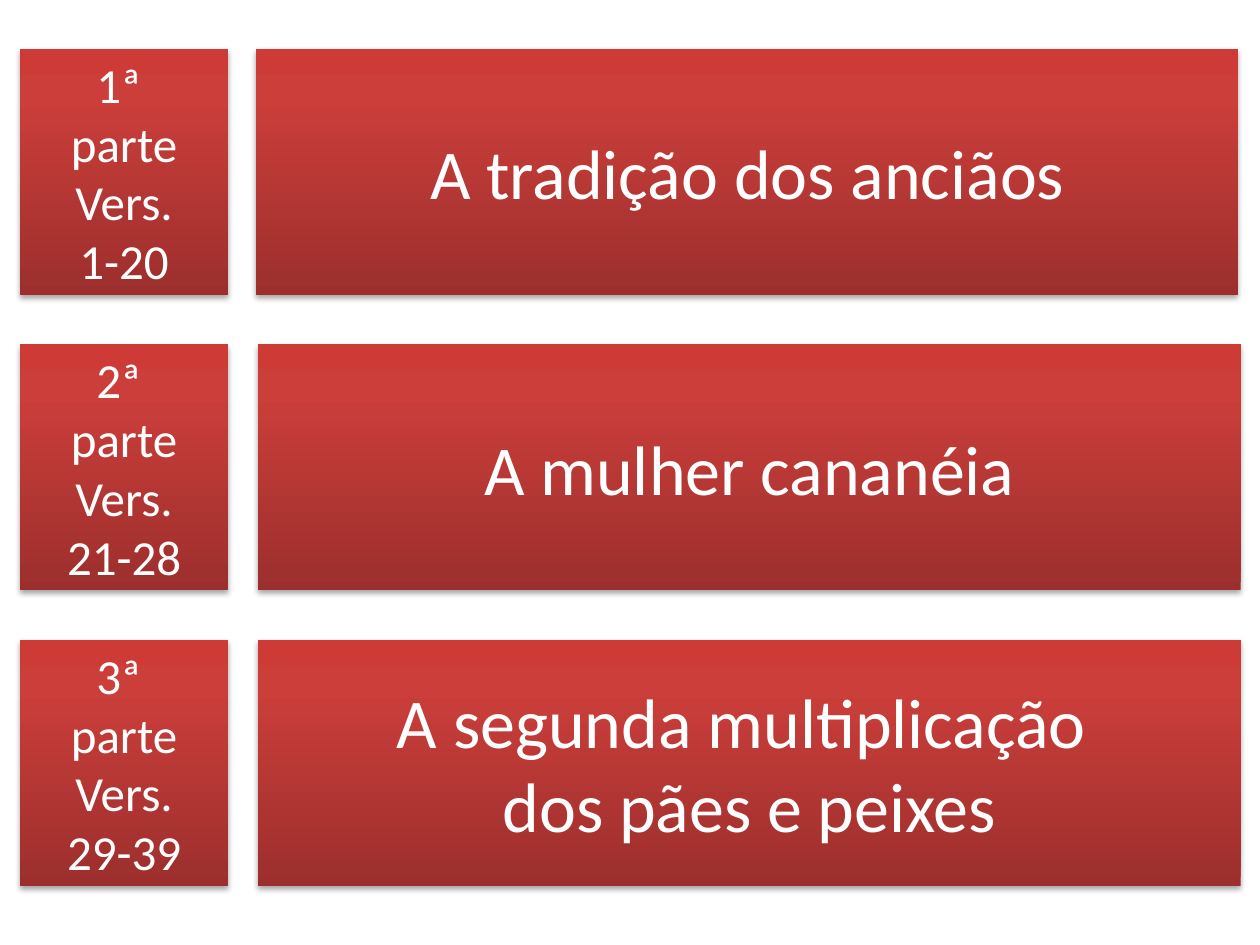
from copy import deepcopy
from dataclasses import dataclass

from lxml.etree import SubElement
from pptx import Presentation
from pptx.dml.color import RGBColor
from pptx.enum.shapes import MSO_SHAPE as Shape
from pptx.enum.text import MSO_ANCHOR as Anchor, PP_ALIGN as Align
from pptx.oxml.ns import qn
from pptx.util import Pt

COLORS = {
    "dark": "9C2F2D",
    "mid": "CB3E3A",
    "bright": "CE3B37",
    "text": "FFFFFF",
    "shadow": "000000",
}
GRADIENT = [(0, "dark"), (0.8, "mid"), (1, "bright")]

TOP, ROW_PITCH, HEIGHT = 28, 168.85, 140.4
LABEL_LEFT, LABEL_WIDTH = 11.5, 118.8
TITLE_WIDTH = 561.4


@dataclass
class Part:
    ordinal: str
    verses: str
    title: list[str]
    title_left: float = 147.5


PARTS = [
    Part("1ª ", "1-20", ["A tradição dos anciãos"], title_left=146.3),
    Part("2ª ", "21-28", ["A mulher cananéia"]),
    Part("3ª ", "29-39", ["A segunda multiplicação ", "dos pães e peixes"]),
]


def rgb(name: str) -> RGBColor:
    return RGBColor.from_string(COLORS[name])


def fill_gradient(panel) -> None:
    """Shade the panel from dark at the bottom to bright at the top."""
    panel.fill.gradient()
    panel.fill.gradient_angle = 90
    stop_list = panel._element.spPr.find(".//" + qn("a:gsLst"))
    stop_list.append(deepcopy(stop_list[-1]))
    for stop, (position, name) in zip(panel.fill.gradient_stops, GRADIENT):
        stop.position = position
        stop.color.rgb = rgb(name)


def cast_shadow(panel) -> None:
    """Add a soft shadow just below the panel."""
    panel.shadow.inherit = False
    effects = panel._element.spPr.find(qn("a:effectLst"))
    shadow = SubElement(
        effects, qn("a:outerShdw"), blurRad=str(Pt(3.15)), dist=str(Pt(1.81)),
        dir="5400000", rotWithShape="0")
    color = SubElement(shadow, qn("a:srgbClr"), val=COLORS["shadow"])
    SubElement(color, qn("a:alpha"), val="35000")


def write_lines(frame, lines: list[str], *, size: float, color: str = "text",
                font: str = "Calibri") -> None:
    frame.word_wrap = True
    frame.vertical_anchor = Anchor.MIDDLE
    for index, line in enumerate(lines):
        paragraph = frame.add_paragraph() if index else frame.paragraphs[0]
        paragraph.alignment = Align.CENTER
        run = paragraph.add_run()
        run.text = line
        run.font.name = font
        run.font.size = Pt(size)
        run.font.color.rgb = rgb(color)


def add_panel(slide, left: float, top: float, width: float,
              lines: list[str], size: float) -> None:
    panel = slide.shapes.add_shape(
        Shape.RECTANGLE, Pt(left), Pt(top), Pt(width), Pt(HEIGHT))
    fill_gradient(panel)
    panel.line.fill.background()
    cast_shadow(panel)
    write_lines(panel.text_frame, lines, size=size)


def main() -> None:
    deck = Presentation()
    deck.slide_width, deck.slide_height = Pt(720), Pt(540)
    slide = deck.slides.add_slide(deck.slide_layouts[6])
    for row, part in enumerate(PARTS):
        top = TOP + row * ROW_PITCH
        label = [part.ordinal, "parte", "Vers.", part.verses]
        add_panel(slide, LABEL_LEFT, top, LABEL_WIDTH, label, size=28)
        add_panel(slide, part.title_left, top, TITLE_WIDTH, part.title, size=40)
    deck.save("out.pptx")


if __name__ == "__main__":
    main()
